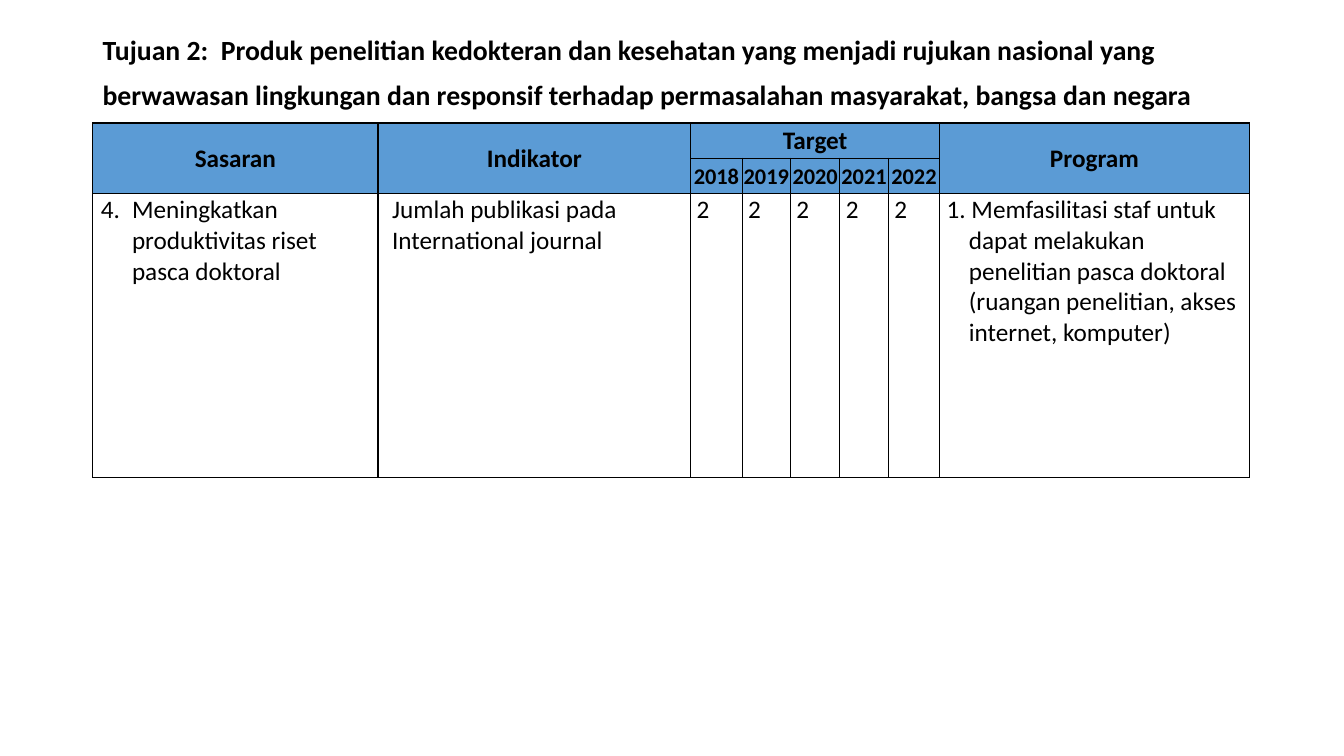
"""Build the slide of research goal 2 with its targets and programme table."""
from dataclasses import dataclass

from lxml.etree import SubElement
from pptx import Presentation
from pptx.dml.color import RGBColor
from pptx.enum.text import MSO_ANCHOR as Anchor, PP_ALIGN as Align
from pptx.oxml.ns import qn
from pptx.util import Inches, Length, Pt

COLOURS = {"text": "000000", "border": "000000", "header": "5B9BD5"}
SLIDE_WIDTH, SLIDE_HEIGHT = Inches(13.33), Inches(7.5)
COLUMNS = (21.23, 23.26, 3.83, 3.6, 3.68, 3.6, 3.83, 23.03)
ROWS = (4.67, 4.67, 37.6)
LEFT, TITLE_TOP, TABLE_TOP = 6.9, 5.33, 16.27
TITLE_WIDTH, TITLE_HEIGHT = 86.27, 9.47
YEARS = range(2018, 2023)
FIRST_YEAR_COLUMN = 2
TITLE = (
    "Tujuan 2:  Produk penelitian kedokteran dan kesehatan yang menjadi rujukan "
    "nasional yang berwawasan lingkungan dan responsif terhadap permasalahan "
    "masyarakat, bangsa dan negara"
)
HEADER_FORMAT = {"alignment": Align.CENTER}
CELL_FORMAT = {
    "margin_left": Inches(0.01),
    "margin_right": Inches(0.01),
    "margin_top": Inches(0.01),
    "margin_bottom": 0,
}


@dataclass(frozen=True)
class Entry:
    row: int
    column: int
    text: str
    size: float = 18
    header: bool = False
    rows: int = 1
    columns: int = 1
    margin: float = 0
    indent: float = 0
    number: int = 0


ENTRIES = [
    Entry(0, 0, "Sasaran", header=True, rows=2),
    Entry(0, 1, "Indikator", header=True, rows=2),
    Entry(0, FIRST_YEAR_COLUMN, "Target", header=True, columns=len(YEARS)),
    Entry(0, 7, "Program", header=True, rows=2),
    *(Entry(1, column, str(year), 16, header=True)
      for column, year in enumerate(YEARS, FIRST_YEAR_COLUMN)),
    Entry(2, 0, "Meningkatkan produktivitas riset pasca doktoral",
          margin=0.38, indent=-0.31, number=4),
    Entry(2, 1, "Jumlah publikasi pada International journal", margin=0.13),
    *(Entry(2, column, "2", margin=0.05)
      for column, _ in enumerate(YEARS, FIRST_YEAR_COLUMN)),
    Entry(2, 7, "1. Memfasilitasi staf untuk dapat melakukan penelitian pasca doktoral "
          "(ruangan penelitian, akses internet, komputer)", margin=0.28, indent=-0.22),
]


def across(percent: float) -> Length:
    return Length(round(SLIDE_WIDTH * percent / 100))


def down(percent: float) -> Length:
    return Length(round(SLIDE_HEIGHT * percent / 100))


def apply_format(target, values: dict) -> None:
    for name, value in values.items():
        setattr(target, name, value)


def add_text(paragraph, text: str, size: float, bold: bool) -> None:
    run = paragraph.add_run()
    run.text = text
    apply_format(run.font, {"name": "Calibri", "size": Pt(size), "bold": bold})
    run.font.color.rgb = RGBColor.from_string(COLOURS["text"])


def add_borders(cell) -> None:
    properties = cell._tc.get_or_add_tcPr()
    for side in ("lnL", "lnR", "lnT", "lnB"):
        line = SubElement(properties, qn(f"a:{side}"), w=str(Pt(1)))
        fill = SubElement(line, qn("a:solidFill"))
        SubElement(fill, qn("a:srgbClr"), val=COLOURS["border"])


def add_title(slide) -> None:
    shape = slide.shapes.add_textbox(
        across(LEFT), down(TITLE_TOP), across(TITLE_WIDTH), down(TITLE_HEIGHT))
    apply_format(shape.text_frame, {"word_wrap": True, "vertical_anchor": Anchor.MIDDLE})
    paragraph = shape.text_frame.paragraphs[0]
    paragraph.line_spacing = 0.9
    add_text(paragraph, TITLE, 19.8, True)
    add_text(paragraph, " ", 32.4, False)


def fill_entry(table, entry: Entry) -> None:
    cell = table.cell(entry.row, entry.column)
    if entry.rows * entry.columns > 1:
        cell.merge(table.cell(entry.row + entry.rows - 1, entry.column + entry.columns - 1))
    cell.vertical_anchor = Anchor.MIDDLE if entry.header else Anchor.TOP
    paragraph = cell.text_frame.paragraphs[0]
    if entry.header:
        apply_format(paragraph, HEADER_FORMAT)
    properties = paragraph._p.get_or_add_pPr()
    properties.set("marL", str(Inches(entry.margin)))
    properties.set("indent", str(Inches(entry.indent)))
    if entry.number:
        SubElement(properties, qn("a:buAutoNum"), type="arabicPeriod", startAt=str(entry.number))
    add_text(paragraph, entry.text, entry.size, entry.header)


def add_target_table(slide) -> None:
    frame = slide.shapes.add_table(
        len(ROWS), len(COLUMNS), across(LEFT), down(TABLE_TOP),
        across(sum(COLUMNS)), down(sum(ROWS)))
    table = frame.table
    apply_format(table, {"first_row": False, "horz_banding": False})
    for column, width in zip(table.columns, COLUMNS):
        column.width = across(width)
    for index, (row, height) in enumerate(zip(table.rows, ROWS)):
        row.height = down(height)
        for cell in row.cells:
            apply_format(cell, CELL_FORMAT)
            add_borders(cell)
            if index < len(ROWS) - 1:
                cell.fill.solid()
                cell.fill.fore_color.rgb = RGBColor.from_string(COLOURS["header"])
            else:
                cell.fill.background()
    for entry in ENTRIES:
        fill_entry(table, entry)


def main() -> None:
    presentation = Presentation()
    apply_format(presentation, {"slide_width": SLIDE_WIDTH, "slide_height": SLIDE_HEIGHT})
    slide = presentation.slides.add_slide(presentation.slide_layouts[6])
    add_title(slide)
    add_target_table(slide)
    presentation.save("out.pptx")


if __name__ == "__main__":
    main()
